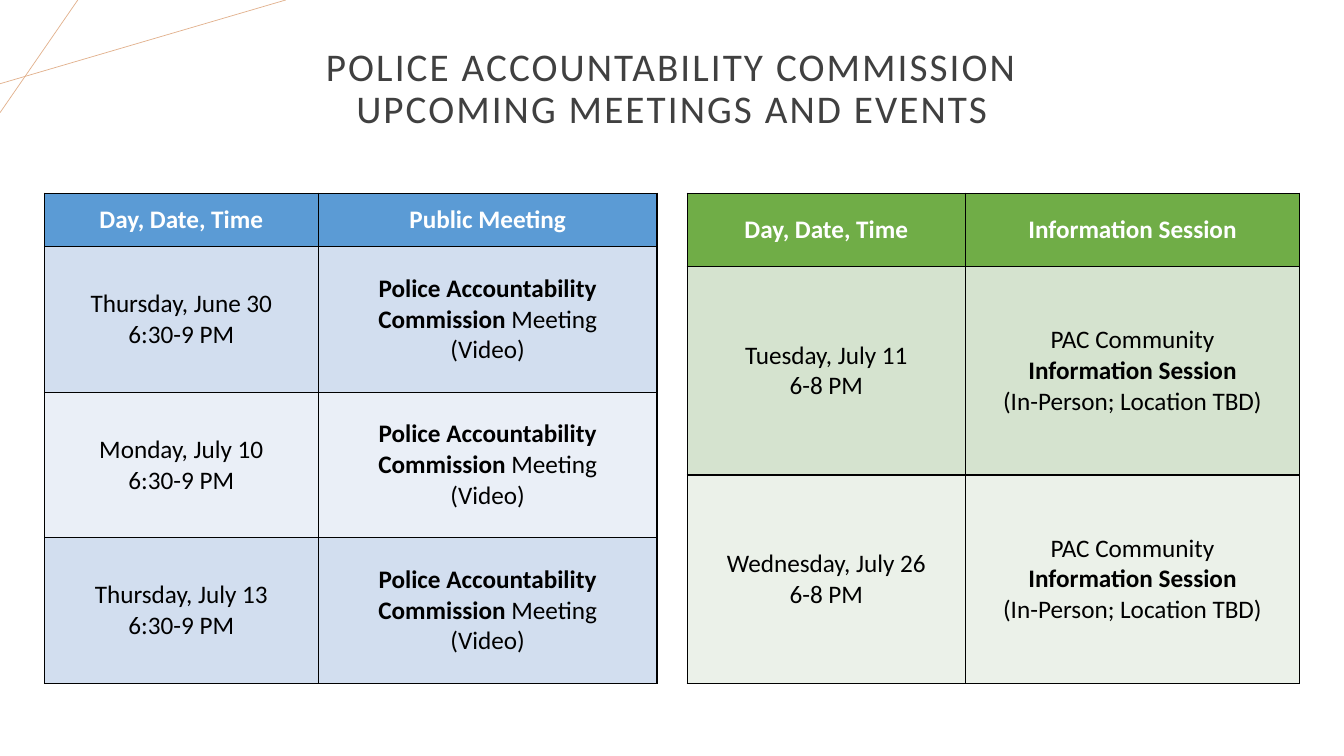
from copy import deepcopy
from dataclasses import dataclass

from lxml.etree import SubElement
from pptx import Presentation
from pptx.dml.color import RGBColor as RGB
from pptx.enum.shapes import MSO_CONNECTOR as CONN
from pptx.enum.text import MSO_ANCHOR as ANCHOR, MSO_AUTO_SIZE as AUTOSIZE, PP_ALIGN as ALIGN
from pptx.oxml.ns import qn
from pptx.util import Cm, Pt


@dataclass(frozen=True)
class Theme:
    font: str = "Calibri"
    title_size: int = 28
    cell_size: int = 18
    title: str = "404040"
    text: str = "000000"
    header_text: str = "FFFFFF"
    border: str = "000000"
    accent: str = "E2B18D"
    # header fill, then the two alternating row fills
    blue: tuple = ("5B9BD5", "D2DEEF", "EAEFF7")
    green: tuple = ("70AD47", "D5E3CF", "EBF1E9")


THEME = Theme()
TABLE_TOP, TABLE_HEIGHT = 4.87, 12.35

PUBLIC_MEETING = [[("Police Accountability Commission", True),
                   (" Meeting\n(Video)", False)]]
INFO_SESSION = [[("PAC Community\n", False), ("Information Session\n", True),
                 ("(In-Person; Location TBD)", False)]]


def plain(*paragraphs, bold=False):
    return [[(text, bold)] for text in paragraphs]


def add_run(p, text, size, color, bold=False, spacing=None):
    """Add text to a paragraph, turning each newline into a line break."""
    for i, line in enumerate(text.split("\n")):
        if i:
            p.add_line_break()
            p._p[-1].append(deepcopy(r._r.rPr))
        if not line:
            continue
        r = p.add_run()
        r.text = line
        r.font.name = THEME.font
        r.font.size = Pt(size)
        r.font.bold = bold
        r.font.color.rgb = RGB.from_string(color)
        if spacing:
            r._r.rPr.set("spc", str(int(spacing * 100)))


def add_accent_line(slide, x1, y1, x2, y2):
    line = slide.shapes.add_connector(CONN.STRAIGHT, Cm(x1), Cm(y1), Cm(x2), Cm(y2))
    line.line.color.rgb = RGB.from_string(THEME.accent)
    line.line.width = Pt(0.5)
    SubElement(line._element.spPr, qn("a:effectLst"))


def set_title(slide, text):
    sp = slide.shapes.title
    sp.left, sp.top, sp.width, sp.height = Cm(2.33), Cm(0.87), Cm(29.21), Cm(2.79)
    tf = sp.text_frame
    tf.auto_size = AUTOSIZE.NONE
    tf.vertical_anchor = ANCHOR.MIDDLE
    p = tf.paragraphs[0]
    p.alignment = ALIGN.CENTER
    p.line_spacing = 0.9
    add_run(p, text, THEME.title_size, THEME.title, spacing=1.5)


def set_borders(cell):
    tc_pr = cell._tc.get_or_add_tcPr()
    for side in ("lnL", "lnR", "lnT", "lnB"):
        ln = SubElement(tc_pr, qn(f"a:{side}"), w=str(Pt(1)))
        SubElement(SubElement(ln, qn("a:solidFill")), qn("a:srgbClr"), val=THEME.border)


def fill_cell(cell, paragraphs, fill, color):
    set_borders(cell)
    cell.fill.solid()
    cell.fill.fore_color.rgb = RGB.from_string(fill)
    cell.vertical_anchor = ANCHOR.MIDDLE
    tf = cell.text_frame
    for i, runs in enumerate(paragraphs):
        p = tf.add_paragraph() if i else tf.paragraphs[0]
        p.alignment = ALIGN.CENTER
        for text, bold in runs:
            add_run(p, text, THEME.cell_size, color, bold)


def add_schedule(slide, left, col_widths, header_height, fills, headers, events):
    table = slide.shapes.add_table(
        len(events) + 1, len(headers), Cm(left), Cm(TABLE_TOP),
        Cm(sum(col_widths)), Cm(TABLE_HEIGHT)).table
    table.horz_banding = False
    for column, width in zip(table.columns, col_widths):
        column.width = Cm(width)

    # Header row, then equal event rows in alternating fills
    event_height = (TABLE_HEIGHT - header_height) / len(events)
    rows = [[plain(h, bold=True) for h in headers], *events]
    for i, contents in enumerate(rows):
        table.rows[i].height = Cm(event_height if i else header_height)
        fill = fills[1 + (i - 1) % 2] if i else fills[0]
        color = THEME.text if i else THEME.header_text
        for j, paragraphs in enumerate(contents):
            fill_cell(table.cell(i, j), paragraphs, fill, color)


def main():
    prs = Presentation()
    prs.slide_width, prs.slide_height = Cm(33.87), Cm(19.05)
    slide = prs.slides.add_slide(prs.slide_layouts[5])

    # Corner decoration
    add_accent_line(slide, 0, 2.11, 7.2, 0)
    add_accent_line(slide, 1.96, 0, 0, 2.84)

    set_title(slide, "POLICE ACCOUNTABILITY COMMISSION\nUPCOMING MEETINGS AND EVENTS")

    # Public meetings
    days = ("Thursday, June 30", "Monday, July 10", "Thursday, July 13")
    add_schedule(slide, 1.12, (6.9, 8.54), 1.35, THEME.blue,
                 ("Day, Date, Time", "Public Meeting"),
                 [(plain(day, "6:30-9 PM"), PUBLIC_MEETING) for day in days])

    # Information sessions
    days = ("Tuesday, July 11", "Wednesday, July 26")
    add_schedule(slide, 17.32, (7.01, 8.42), 1.85, THEME.green,
                 ("Day, Date, Time", "Information Session"),
                 [(plain(f"{day}\n6-8 PM"), INFO_SESSION) for day in days])

    prs.save("out.pptx")


if __name__ == "__main__":
    main()
